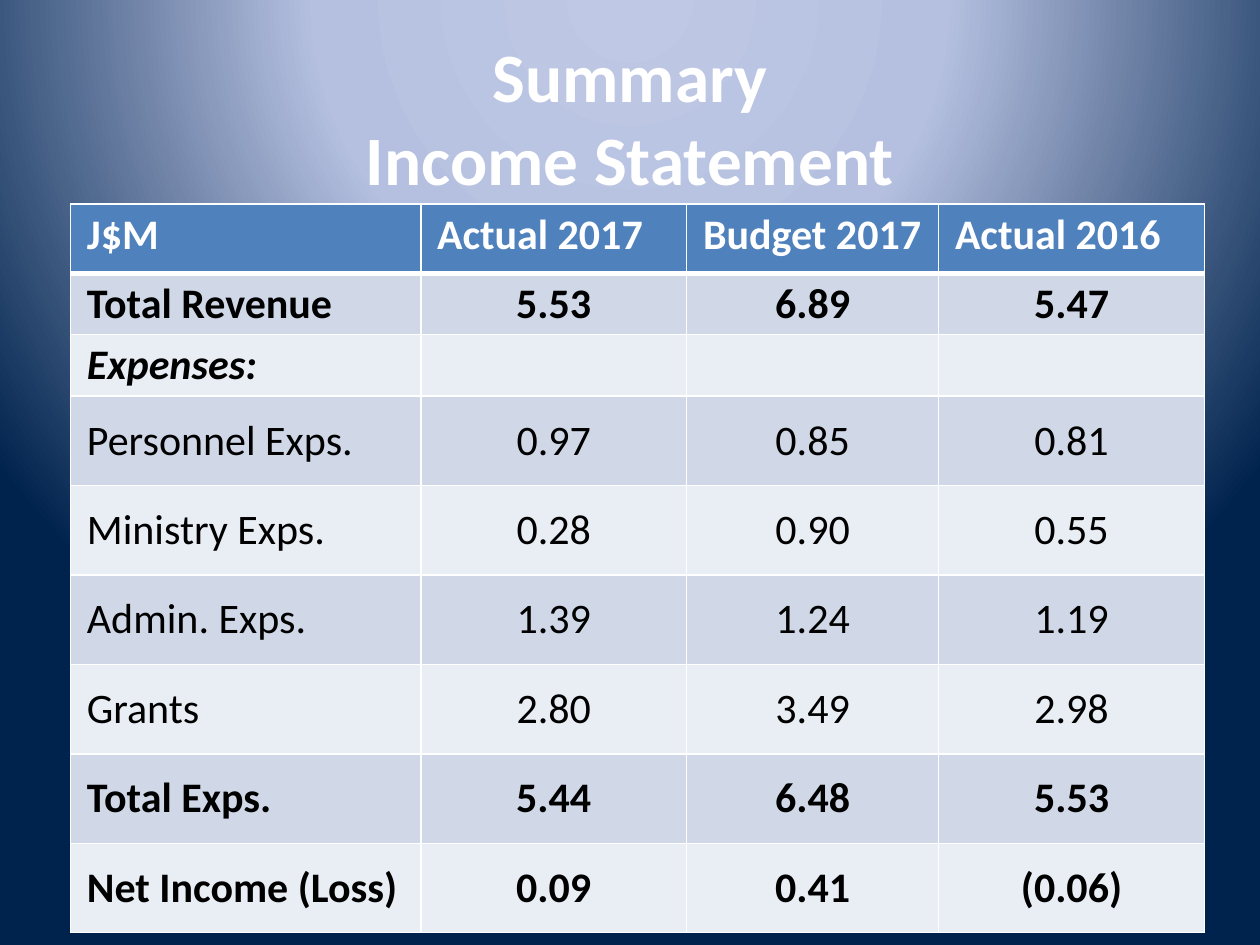
from pptx import Presentation
from pptx.dml.color import RGBColor
from pptx.enum.text import MSO_ANCHOR, MSO_AUTO_SIZE, PP_ALIGN
from pptx.oxml import parse_xml
from pptx.oxml.ns import nsdecls, qn
from pptx.util import Inches, Pt

TITLE = ["Summary", "Income Statement"]
HEADER = ["J$M", "Actual 2017", "Budget 2017", "Actual 2016"]
# Row values, height, format of the row
ROWS = [
    (["Total Revenue", "5.53", "6.89", "5.47"], 0.48, {"bold": True}),
    (["Expenses:", "", "", ""], 0.48, {"bold": True, "italic": True}),
    (["Personnel Exps.", "0.97", "0.85", "0.81"], 0.71, {}),
    (["Ministry Exps.", "0.28", "0.90", "0.55"], 0.71, {}),
    (["Admin. Exps.", "1.39", "1.24", "1.19"], 0.71, {}),
    (["Grants", "2.80", "3.49", "2.98"], 0.71, {}),
    (["Total Exps.", "5.44", "6.48", "5.53"], 0.71, {"bold": True}),
    (["Net Income (Loss)", "0.09", "0.41", "(0.06)"], 0.71, {"bold": True}),
]
COL_WIDTHS = [2.78, 2.11, 2, 2.11]
HEADER_HEIGHT = 0.55
COLORS = {"white": "FFFFFF", "black": "000000", "header": "4F81BD",
          "band": "D0D8E8", "light": "E9EDF4"}
BACKGROUND = [(0, "BFC9E5"), (40, "B5C0E0"), (100, "00234D")]


def write(tf, lines, size=24, color="black", bold=False, italic=False,
          align=PP_ALIGN.LEFT):
    p = tf.paragraphs[0]
    p.alignment = align
    for i, line in enumerate(lines):
        if i:
            p.add_line_break()
        r = p.add_run()
        r.text = line
        r.font.name = "Calibri"
        r.font.size = Pt(size)
        r.font.bold = bold
        r.font.italic = italic
        r.font.color.rgb = RGBColor.from_string(COLORS[color])


def set_borders(cell, **widths):
    tc_pr = cell._tc.get_or_add_tcPr()
    for i, side in enumerate("LRTB"):
        tc_pr.insert(i, parse_xml(
            f'<a:ln{side} {nsdecls("a")} w="{Pt(widths.get(side, 1))}"><a:solidFill>'
            f'<a:srgbClr val="{COLORS["white"]}"/></a:solidFill></a:ln{side}>'))


def set_background(s):
    s.background.fill.gradient()
    grad = s._element.find(".//" + qn("a:gradFill"))
    stops = "".join(f'<a:gs pos="{pos * 1000}"><a:srgbClr val="{c}"/></a:gs>'
                    for pos, c in BACKGROUND)
    grad.getparent().replace(grad, parse_xml(
        f'<a:gradFill {nsdecls("a")} rotWithShape="1"><a:gsLst>{stops}</a:gsLst>'
        '<a:path path="circle"><a:fillToRect l="50000" t="-80000" r="50000" '
        'b="180000"/></a:path></a:gradFill>'))


def fill_cell(cell, text, fill, anchor, **fmt):
    cell.margin_left = cell.margin_right = Inches(0.13)
    cell.margin_top = cell.margin_bottom = Inches(0.04)
    cell.vertical_anchor = anchor
    cell.fill.solid()
    cell.fill.fore_color.rgb = RGBColor.from_string(COLORS[fill])
    if text:
        write(cell.text_frame, [text], **fmt)


def main():
    prs = Presentation()
    prs.slide_width, prs.slide_height = Inches(10), Inches(7.5)
    s = prs.slides.add_slide(prs.slide_layouts[5])
    set_background(s)

    # Title
    title = s.shapes.title
    title.left, title.top = Inches(0.5), Inches(0.3)
    title.width, title.height = Inches(9), Inches(1.25)
    tf = title.text_frame
    tf.auto_size = MSO_AUTO_SIZE.NONE
    tf.vertical_anchor = MSO_ANCHOR.MIDDLE
    write(tf, TITLE, size=39.6, color="white", bold=True, align=PP_ALIGN.CENTER)

    # Income statement table
    heights = [HEADER_HEIGHT] + [height for _, height, _ in ROWS]
    table = s.shapes.add_table(
        len(heights), len(COL_WIDTHS), Inches(0.56), Inches(1.62),
        Inches(sum(COL_WIDTHS)), Inches(sum(heights))).table
    table.horz_banding = False
    for col, width in zip(table.columns, COL_WIDTHS):
        col.width = Inches(width)
    for row, height in zip(table.rows, heights):
        row.height = Inches(height)

    # Header row
    for c, text in enumerate(HEADER):
        cell = table.cell(0, c)
        fill_cell(cell, text, "header", MSO_ANCHOR.TOP, color="white", bold=True)
        set_borders(cell, B=3)

    # Body rows in alternating bands
    for r, (values, _, fmt) in enumerate(ROWS, 1):
        for c, text in enumerate(values):
            cell = table.cell(r, c)
            fill_cell(cell, text, "band" if r % 2 else "light", MSO_ANCHOR.MIDDLE,
                      align=PP_ALIGN.CENTER if c else PP_ALIGN.LEFT, **fmt)
            set_borders(cell, T=3 if r == 1 else 1)

    prs.save("out.pptx")


if __name__ == "__main__":
    main()
